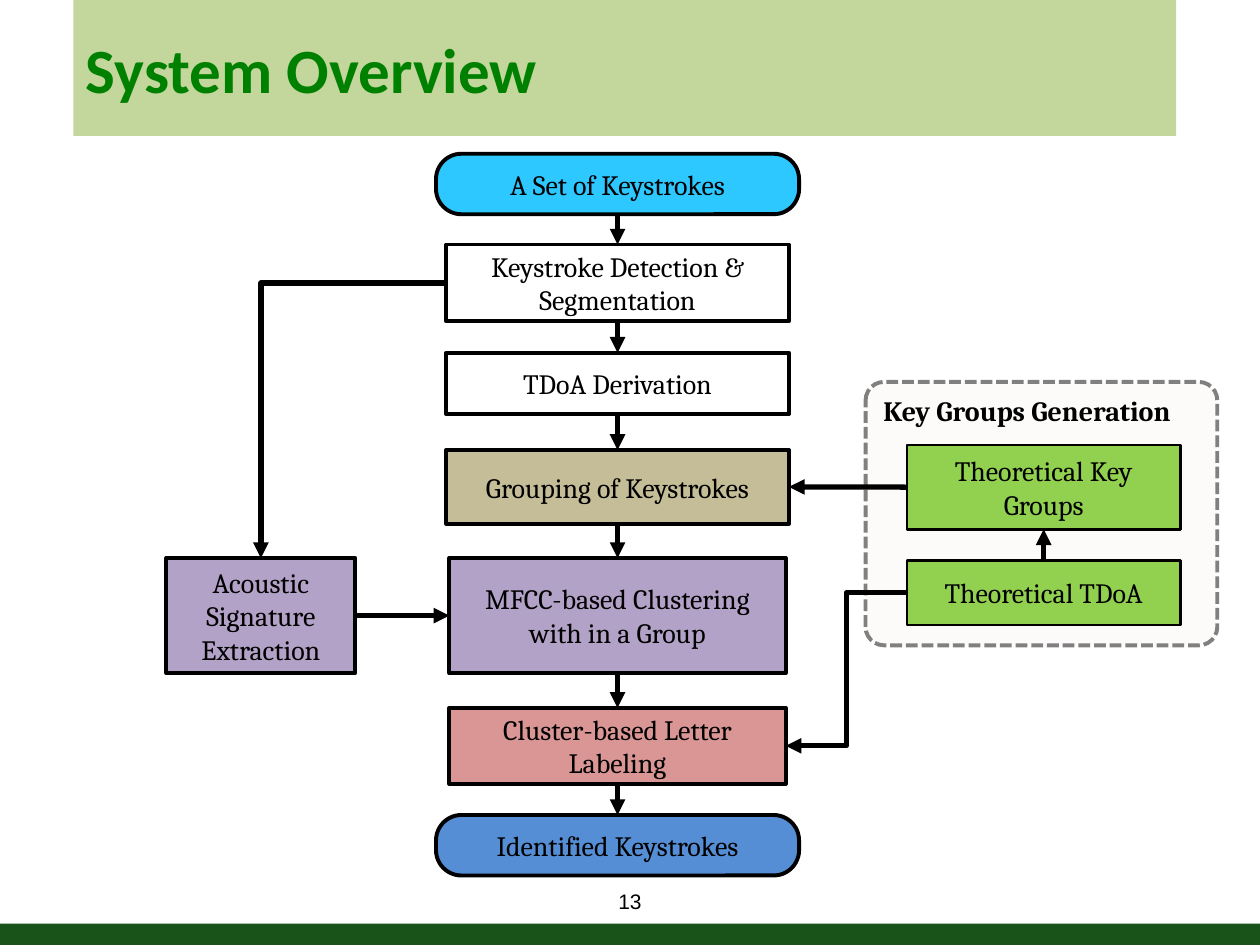
from pptx import Presentation
from pptx.dml.color import RGBColor
from pptx.enum import dml, shapes, text
from pptx.oxml import ns
from pptx.util import Cm, Pt
from lxml import etree

RECT = shapes.MSO_SHAPE.RECTANGLE
ROUND = shapes.MSO_SHAPE.ROUNDED_RECTANGLE
TOP, LEFT, BOTTOM, RIGHT = range(4)
MAIN, SIDE, THEORY = 12.45, 5.26, 21.04

# key: (label, centre x, top, width, height, fill, line width, corner)
STEPS = {
    "input": ("A Set of Keystrokes", MAIN, 3.1, 7.32, 1.22, "2DC8FF", 2.25, 0.42),
    "detect": ("Keystroke Detection & Segmentation", MAIN, 4.93, 6.91, 1.55, "FFFFFF", 2.25, 0),
    "tdoa": ("TDoA Derivation", MAIN, 7.11, 6.91, 1.24, "FFFFFF", 2.25, 0),
    "group": ("Grouping of Keystrokes", MAIN, 9.07, 6.91, 1.49, "C4BD97", 2.25, 0),
    "cluster": ("MFCC-based Clustering with in a Group", MAIN, 11.25, 6.78, 2.32, "B3A2C7", 2.25, 0),
    "label": ("Cluster-based Letter Labeling", MAIN, 14.27, 6.78, 1.53, "D99694", 2.25, 0),
    "output": ("Identified Keystrokes", MAIN, 16.43, 7.32, 1.22, "558ED5", 2.25, 0.42),
    "acoustic": ("Acoustic Signature Extraction", SIDE, 11.25, 3.81, 2.32, "B3A2C7", 2.25, 0),
    "keys": ("Theoretical Key Groups", THEORY, 8.97, 5.51, 1.7, "92D050", 1.5, 0),
    "theory": ("Theoretical TDoA", THEORY, 11.3, 5.51, 1.3, "92D050", 1.5, 0),
}
FLOW = ["input", "detect", "tdoa", "group", "cluster", "label", "output"]
ARROWS = [(a, BOTTOM, b, TOP, "line") for a, b in zip(FLOW, FLOW[1:])] + [
    ("theory", TOP, "keys", BOTTOM, "line"),
    ("keys", LEFT, "group", RIGHT, "line"),
    ("acoustic", RIGHT, "cluster", LEFT, "line"),
    ("detect", LEFT, "acoustic", TOP, "bentConnector2"),
    ("theory", LEFT, "label", RIGHT, "bentConnector3"),
]

prs = Presentation()
prs.slide_width, prs.slide_height = Cm(25.4), Cm(19.05)
s = prs.slides.add_slide(prs.slide_layouts[6])


def color(value):
    return RGBColor.from_string(value)


def add_box(x, y, w, h, fill, line=None, width=0, corner=0):
    sp = s.shapes.add_shape(ROUND if corner else RECT, Cm(x), Cm(y), Cm(w), Cm(h))
    sp.shadow.inherit = False
    sp.fill.solid()
    sp.fill.fore_color.rgb = color(fill)
    if corner:
        sp.adjustments[0] = corner
    if line:
        sp.line.color.rgb = color(line)
        sp.line.width = Pt(width)
    else:
        sp.line.fill.background()
    return sp


def write(sp, content, size=16, font="Cambria", ink="000000", bold=False,
          align=text.PP_ALIGN.CENTER, anchor=text.MSO_ANCHOR.MIDDLE):
    tf = sp.text_frame
    tf.word_wrap = True
    tf.vertical_anchor = anchor
    p = tf.paragraphs[0]
    p.alignment = align
    r = p.add_run()
    r.text = content
    r.font.name, r.font.size, r.font.bold = font, Pt(size), bold
    r.font.color.rgb = color(ink)


def add_arrow(start, start_side, end, end_side, kind):
    straight = kind == "line"
    connector = shapes.MSO_CONNECTOR.STRAIGHT if straight else shapes.MSO_CONNECTOR.ELBOW
    c = s.shapes.add_connector(connector, 0, 0, 0, 0)
    c.begin_connect(start, start_side)
    c.end_connect(end, end_side)
    c.line.color.rgb = color("000000")
    c.line.width = Pt(3)
    etree.SubElement(c.line._get_or_add_ln(), ns.qn("a:tailEnd"), type="triangle")
    props = c._element.spPr
    props.find(ns.qn("a:prstGeom")).set("prst", kind)
    etree.SubElement(props, ns.qn("a:effectLst"))


add_box(0, 18.62, 25.4, 0.43, "195319")
title = add_box(1.48, 0, 22.23, 2.74, "C3D69B")
write(title, "System Overview", 36, "Calibri", "008000", True, text.PP_ALIGN.LEFT)
number = s.shapes.add_textbox(Cm(9.74), Cm(17.65), Cm(5.92), Cm(1.02))
write(number, "13", 12, "Arial")

panel = add_box(17.45, 7.7, 7.09, 5.31, "FCFBF9", "808080", 2.25, 0.07)
panel.line.dash_style = dml.MSO_LINE.SQUARE_DOT
write(panel, "Key Groups Generation", bold=True,
      align=text.PP_ALIGN.LEFT, anchor=text.MSO_ANCHOR.TOP)

boxes = {}
for key, (label, center, top, w, h, fill, width, corner) in STEPS.items():
    boxes[key] = add_box(center - w / 2, top, w, h, fill, "000000", width, corner)
    write(boxes[key], label)

for start, start_side, end, end_side, kind in ARROWS:
    add_arrow(boxes[start], start_side, boxes[end], end_side, kind)

prs.save("out.pptx")
